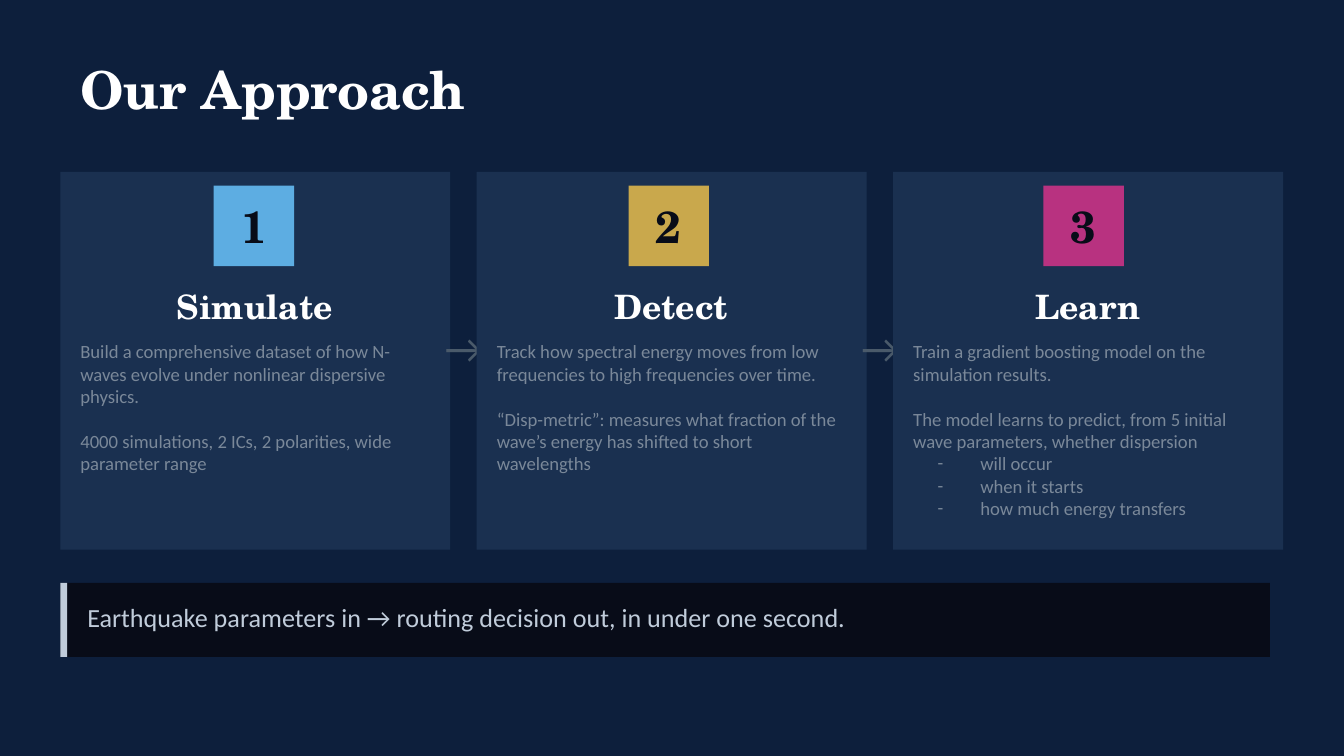
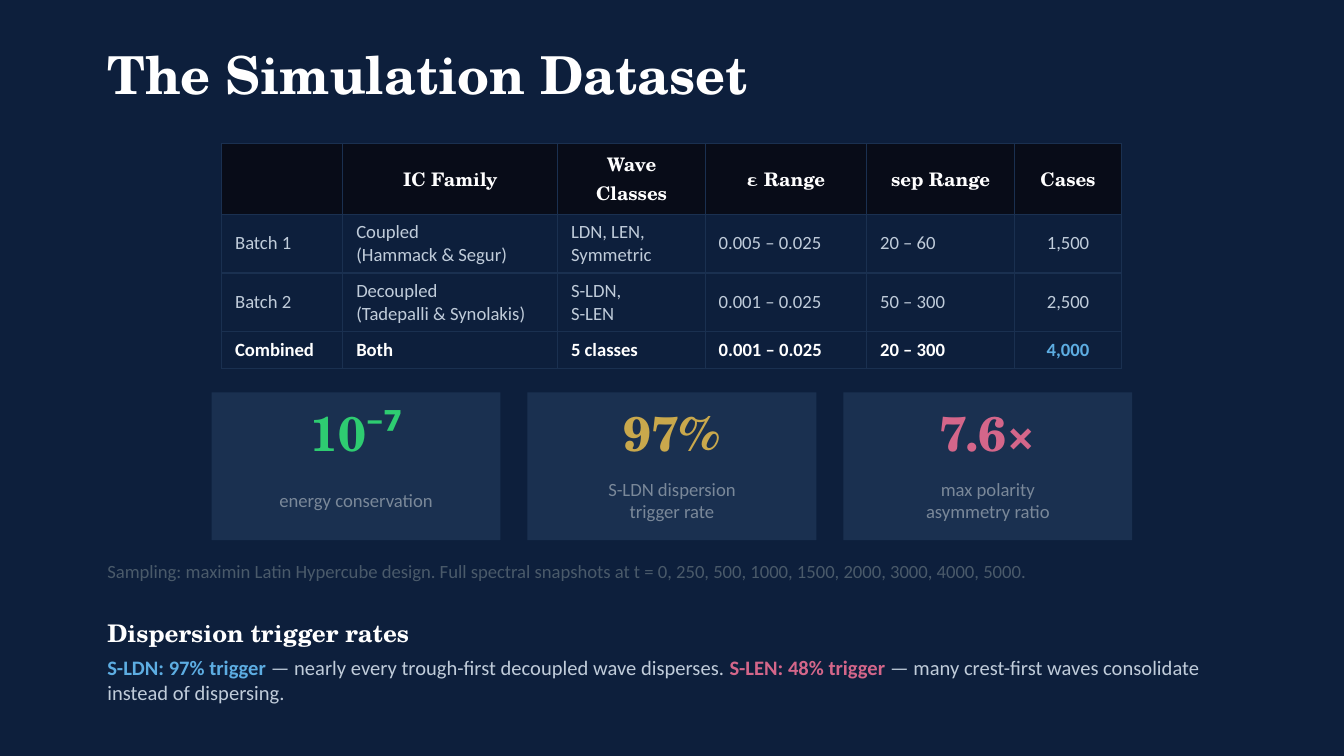
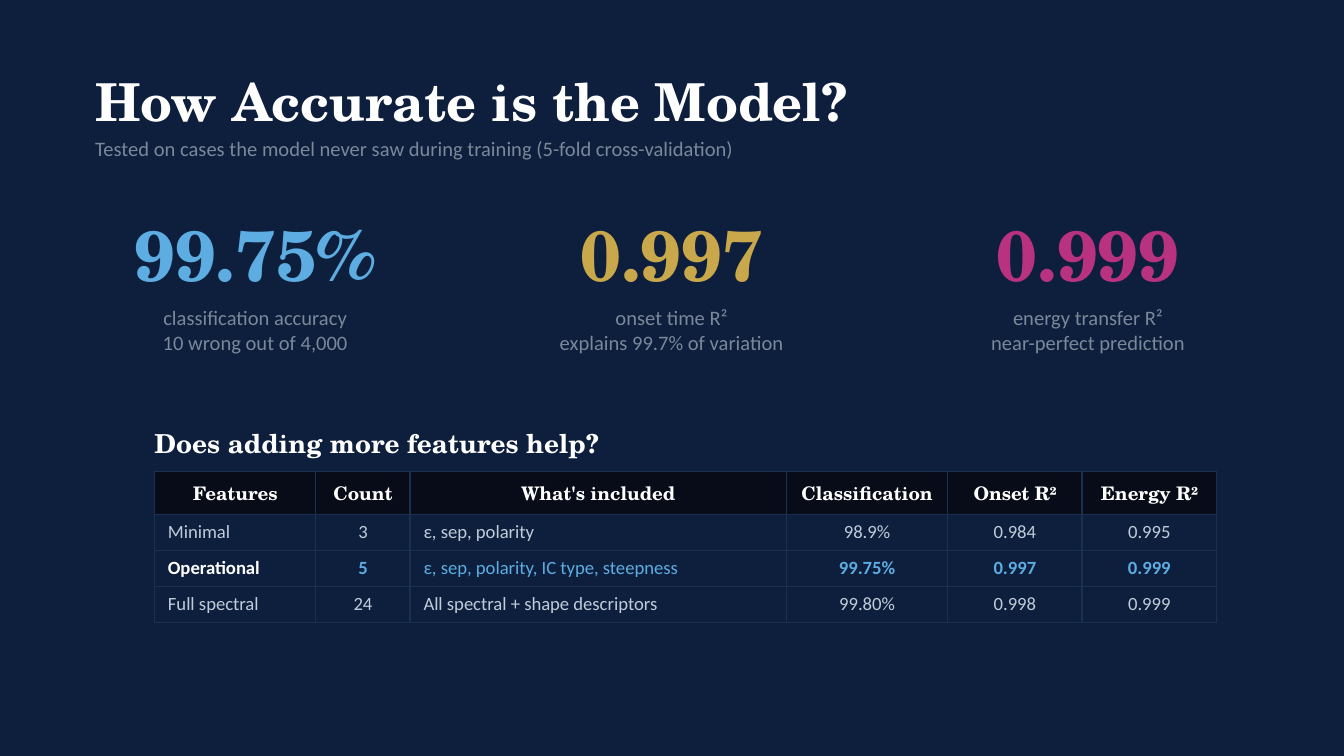
from lxml.etree import SubElement
from pptx import Presentation
from pptx.dml.color import RGBColor
from pptx.enum.shapes import MSO_SHAPE
from pptx.enum.text import MSO_ANCHOR, PP_ALIGN
from pptx.oxml.ns import qn
from pptx.util import Cm, Pt

COLORS = {
    "navy": "0D1F3C",
    "panel": "1A3050",
    "ink": "080C18",
    "white": "FFFFFF",
    "silver": "C0CCDA",
    "gray": "7A8899",
    "dim": "4A5A6A",
    "blue": "5DADE2",
    "gold": "C9A84C",
    "magenta": "B83280",
    "rose": "D4668A",
    "green": "2ECC71",
}
SERIF = "TeX Gyre Schola"
SANS = "Calibri"
HEADING = {"font": SERIF, "color": "white", "bold": True}
CENTER = PP_ALIGN.CENTER
LEFT = PP_ALIGN.LEFT


def rgb(name):
    return RGBColor.from_string(COLORS[name])


def add_dash(paragraph, font, color):
    properties = paragraph._p.get_or_add_pPr()
    properties.set("marL", str(Cm(1.27)))
    properties.set("indent", str(Cm(-0.81)))
    tint = SubElement(properties, qn("a:buClr"))
    SubElement(tint, qn("a:srgbClr"), val=COLORS[color])
    SubElement(properties, qn("a:buFont"), typeface=font)
    SubElement(properties, qn("a:buChar"), char="-")


def write(frame, text, size=10, font=SANS, color="gray", bold=False,
          align=LEFT, gap=0, bullets=()):
    lines = [text] if isinstance(text, str) else list(text)
    for index, line in enumerate(lines + list(bullets)):
        paragraph = frame.paragraphs[0] if index == 0 else frame.add_paragraph()
        paragraph.alignment = align
        if index >= len(lines):
            add_dash(paragraph, font, color)
        elif index and gap:
            paragraph.space_before = Pt(gap)
        pieces = [(line, {})] if isinstance(line, str) else line
        for words, changes in pieces:
            run = paragraph.add_run()
            run.text = words
            run.font.size = Pt(size)
            run.font.name = font
            run.font.bold = changes.get("bold", bold)
            run.font.color.rgb = rgb(changes.get("color", color))


class Deck:
    def __init__(self):
        self.presentation = Presentation()
        self.presentation.slide_width = Cm(25.4)
        self.presentation.slide_height = Cm(14.29)
        self.slide = None

    def new_slide(self, title, left, top):
        blank = self.presentation.slide_layouts[6]
        self.slide = self.presentation.slides.add_slide(blank)
        self.slide.background.fill.solid()
        self.slide.background.fill.fore_color.rgb = rgb("navy")
        self.text(title, left, top, 22.86, 1.27, size=28, **HEADING)

    def fit(self, frame, anchor):
        frame.word_wrap = True
        frame.vertical_anchor = anchor
        frame.margin_left = frame.margin_right = 0
        frame.margin_top = frame.margin_bottom = 0

    def text(self, words, left, top, width, height,
             anchor=MSO_ANCHOR.MIDDLE, **style):
        box = self.slide.shapes.add_textbox(
            Cm(left), Cm(top), Cm(width), Cm(height))
        self.fit(box.text_frame, anchor)
        write(box.text_frame, words, **style)

    def block(self, left, top, width, height, fill, label=None, **style):
        block = self.slide.shapes.add_shape(
            MSO_SHAPE.RECTANGLE, Cm(left), Cm(top), Cm(width), Cm(height))
        block.shadow.inherit = False
        block.fill.solid()
        block.fill.fore_color.rgb = rgb(fill)
        block.line.fill.background()
        if label:
            self.fit(block.text_frame, MSO_ANCHOR.MIDDLE)
            write(block.text_frame, label, align=CENTER, **style)

    def border(self, cell):
        properties = cell._tc.get_or_add_tcPr()
        for index, side in enumerate(("lnL", "lnR", "lnT", "lnB")):
            line = properties.makeelement(qn(f"a:{side}"), {"w": str(Pt(0.75))})
            fill = SubElement(line, qn("a:solidFill"))
            SubElement(fill, qn("a:srgbClr"), val=COLORS["panel"])
            properties.insert(index, line)

    def table(self, rows, left, top, widths, heights, centered, highlights):
        grid = self.slide.shapes.add_table(
            len(rows), len(widths), Cm(left), Cm(top),
            Cm(sum(widths)), Cm(sum(heights))).table
        grid.horz_banding = False
        for column, width in zip(grid.columns, widths):
            column.width = Cm(width)
        for row, height in zip(grid.rows, heights):
            row.height = Cm(height)
        for r, row in enumerate(rows):
            for c, words in enumerate(row):
                cell = grid.cell(r, c)
                cell.vertical_anchor = MSO_ANCHOR.MIDDLE
                if r == 0:
                    cell.fill.solid()
                    cell.fill.fore_color.rgb = rgb("ink")
                    style = HEADING
                else:
                    cell.fill.background()
                    style = highlights[r][c] if r in highlights else {"color": "silver"}
                self.border(cell)
                if words:
                    align = CENTER if r == 0 or c in centered else LEFT
                    write(cell.text_frame, words, align=align, **style)


def approach(deck):
    deck.new_slide("Our Approach", 1.52, 1.04)
    steps = [
        ("Simulate", "blue", [
            "Build a comprehensive dataset of how N-waves evolve under "
            "nonlinear dispersive physics.",
            "4000 simulations, 2 ICs, 2 polarities, wide parameter range"], []),
        ("Detect", "gold", [
            "Track how spectral energy moves from low frequencies to high "
            "frequencies over time.",
            "“Disp-metric”: measures what fraction of the wave’s energy has "
            "shifted to short wavelengths"], []),
        ("Learn", "magenta", [
            "Train a gradient boosting model on the simulation results.",
            "The model learns to predict, from 5 initial wave parameters, "
            "whether dispersion"],
         ["will occur", "when it starts", "how much energy transfers"]),
    ]
    for index, (name, color, details, outcomes) in enumerate(steps):
        left = 1.14 + 7.87 * index
        deck.block(left, 3.25, 7.37, 7.14, "panel")
        deck.block(4.04 + 7.84 * index, 3.51, 1.52, 1.52, color,
                   str(index + 1), size=24, font=SERIF, color="ink", bold=True)
        deck.text(name, left + 0.38, 5.28, 6.6, 1.02,
                  size=18, align=CENTER, **HEADING)
        deck.text(details, left + 0.38, 6.43, 6.6, 3.96,
                  anchor=MSO_ANCHOR.TOP, gap=12, bullets=outcomes)
        if index < len(steps) - 1:
            deck.text("→", left + 7.11, 5.92, 1.02, 1.27,
                      size=22, color="dim", align=CENTER)
    deck.block(1.14, 11.02, 22.86, 1.4, "ink")
    deck.block(1.14, 11.02, 0.13, 1.4, "silver")
    deck.text("Earthquake parameters in → routing decision out, in under one second.",
              1.65, 11.15, 21.84, 1.02, size=14, color="silver")


def dataset(deck):
    deck.new_slide("The Simulation Dataset", 2.03, 0.76)
    total = {"color": "white", "bold": True}
    deck.table([
        ["", "IC Family", "Wave Classes", "ε Range", "sep Range", "Cases"],
        ["Batch 1", ["Coupled", "(Hammack & Segur)"], ["LDN, LEN,", "Symmetric"],
         "0.005 – 0.025", "20 – 60", "1,500"],
        ["Batch 2", ["Decoupled", "(Tadepalli & Synolakis)"], ["S-LDN,", "S-LEN"],
         "0.001 – 0.025", "50 – 300", "2,500"],
        ["Combined", "Both", "5 classes", "0.001 – 0.025", "20 – 300", "4,000"],
    ], 4.19, 2.71, [2.29, 4.06, 2.79, 3.05, 2.79, 2.03], [1.34, 1.11, 1.11, 0.69],
        {5}, {3: [total] * 5 + [{"color": "blue", "bold": True}]})
    findings = [
        ("10⁻⁷", "green", "energy conservation"),
        ("97%", "gold", ["S-LDN dispersion", "trigger rate"]),
        ("7.6×", "rose", ["max polarity", "asymmetry ratio"]),
    ]
    for index, (value, color, caption) in enumerate(findings):
        left = 4.0 + 5.97 * index
        deck.block(left, 7.42, 5.46, 2.79, "panel")
        deck.text(value, left, 7.47, 5.46, 1.4, size=26, font=SERIF,
                  color=color, bold=True, align=CENTER)
        deck.text(caption, left, 8.94, 5.46, 1.02, align=CENTER)
    deck.text("Sampling: maximin Latin Hypercube design. Full spectral snapshots at "
              "t = 0, 250, 500, 1000, 1500, 2000, 3000, 4000, 5000.",
              2.03, 10.48, 21.34, 0.64, color="dim")
    deck.text("Dispersion trigger rates", 2.03, 11.65, 22.86, 0.64,
              size=13, **HEADING)
    deck.text([[
        ("S-LDN: 97% trigger", {"color": "blue", "bold": True}),
        (" — nearly every trough-first decoupled wave disperses. ", {}),
        ("S-LEN: 48% trigger", {"color": "rose", "bold": True}),
        (" — many crest-first waves consolidate instead of dispersing.", {}),
    ]], 2.03, 12.4, 21.34, 0.89, size=11, color="silver")


def accuracy(deck):
    deck.new_slide("How Accurate is the Model?", 1.8, 1.27)
    deck.text("Tested on cases the model never saw during training "
              "(5-fold cross-validation)", 1.8, 2.49, 22.86, 0.64, size=11)
    scores = [
        ("99.75%", "blue", ["classification accuracy", "10 wrong out of 4,000"]),
        ("0.997", "gold", ["onset time R²", "explains 99.7% of variation"]),
        ("0.999", "magenta", ["energy transfer R²", "near-perfect prediction"]),
    ]
    for index, (value, color, caption) in enumerate(scores):
        left = 1.27 + 7.87 * index
        deck.text(value, left, 3.89, 7.11, 1.78, size=38, font=SERIF,
                  color=color, bold=True, align=CENTER)
        deck.text(caption, left, 5.66, 7.11, 1.14, size=11, align=CENTER)
    deck.text("Does adding more features help?", 2.92, 7.99, 20.07, 0.76,
              size=14, **HEADING)
    best = {"color": "blue", "bold": True}
    deck.table([
        ["Features", "Count", "What's included", "Classification",
         "Onset R²", "Energy R²"],
        ["Minimal", "3", "ε, sep, polarity", "98.9%", "0.984", "0.995"],
        ["Operational", "5", "ε, sep, polarity, IC type, steepness",
         "99.75%", "0.997", "0.999"],
        ["Full spectral", "24", "All spectral + shape descriptors",
         "99.80%", "0.998", "0.999"],
    ], 2.92, 8.91, [3.05, 1.78, 7.11, 3.05, 2.54, 2.54], [0.81, 0.68, 0.68, 0.68],
        {1, 3, 4, 5},
        {2: [{"color": "white", "bold": True}, best, {"color": "blue"}] + [best] * 3})


def main():
    deck = Deck()
    approach(deck)
    dataset(deck)
    accuracy(deck)
    deck.presentation.save("out.pptx")


if __name__ == "__main__":
    main()
